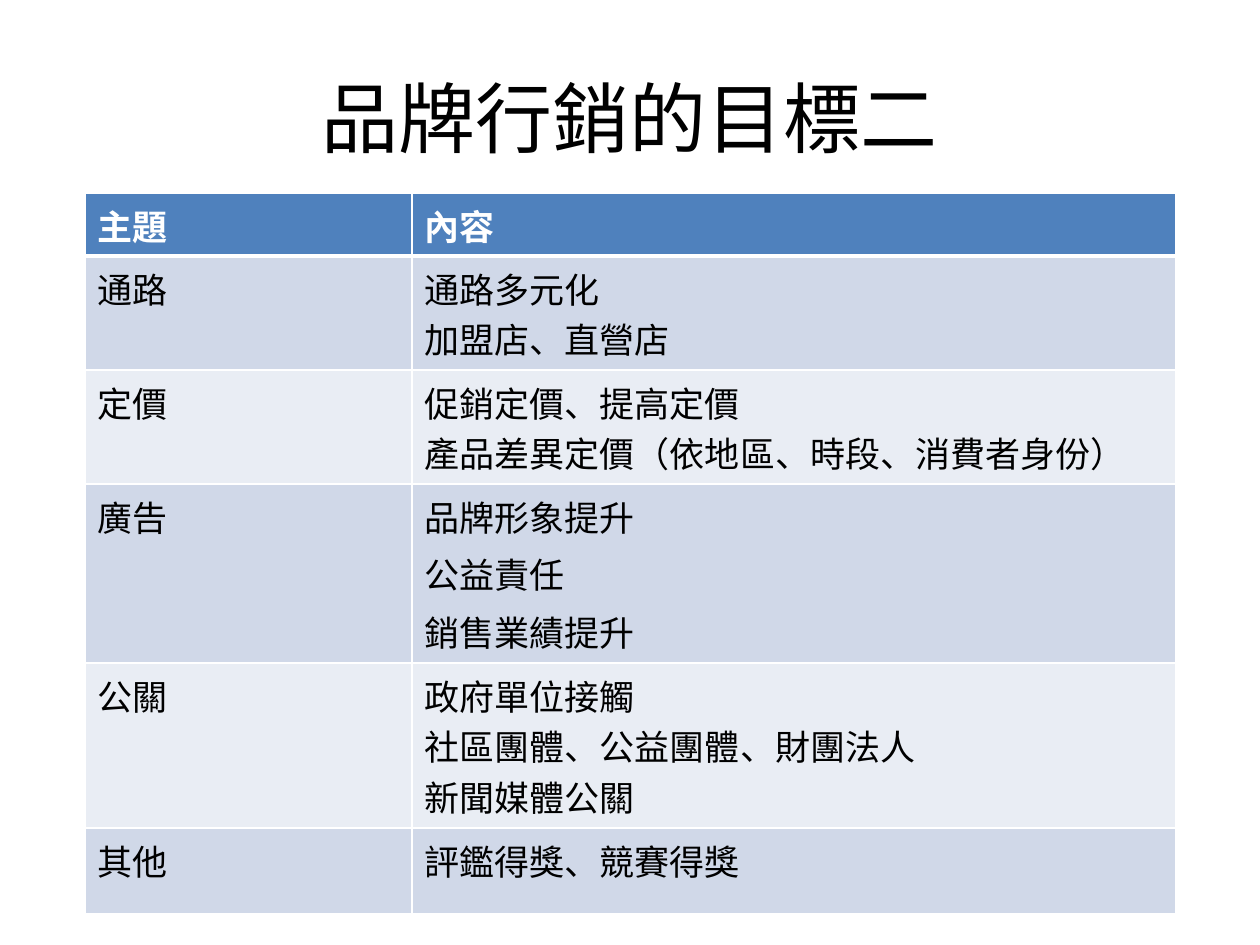
from pptx import Presentation
from pptx.dml.color import RGBColor
from pptx.enum.text import MSO_ANCHOR, PP_ALIGN
from pptx.oxml.ns import qn
from pptx.util import Pt
from lxml.etree import SubElement

EMU_PER_PX = 914400 / 126

BLACK = RGBColor(0x00, 0x00, 0x00)
WHITE = RGBColor(0xFF, 0xFF, 0xFF)
HEADER_BLUE = RGBColor(0x4F, 0x81, 0xBD)
BANDS = (RGBColor(0xD0, 0xD8, 0xE8), RGBColor(0xE9, 0xED, 0xF4))

CJK = "Noto Sans CJK SC"
LATIN = "Karla"

TITLE = {"name": CJK, "size": Pt(44), "bold": False}
HEADER = {"name": CJK, "size": Pt(20), "bold": True}
TOPIC = {"name": CJK, "size": Pt(20), "bold": False}
DETAIL = {"name": LATIN, "size": Pt(20), "bold": False}

COLUMN_WIDTHS = (327, 764)
HEADINGS = ("主題", "內容")
HEADER_HEIGHT = 63

# Topic, content lines, row height, content format, space before each line
GOALS = (
    ("通路", ("通路多元化", "加盟店、直營店"), 114, DETAIL, 0),
    ("定價", ("促銷定價、提高定價", "產品差異定價（依地區、時段、消費者身份）"), 114, DETAIL, 0),
    ("廣告", ("品牌形象提升", "公益責任", "銷售業績提升"), 179, DETAIL, 4),
    ("公關", ("政府單位接觸", "社區團體、公益團體、財團法人", "新聞媒體公關"), 165, TOPIC, 0),
    ("其他", ("評鑑得獎、競賽得獎",), 86, TOPIC, 0),
)


def px(length):
    return round(length * EMU_PER_PX)


def write_lines(frame, lines, look, color, space_before=0, align=PP_ALIGN.LEFT):
    for index, line in enumerate(lines):
        paragraph = frame.add_paragraph() if index else frame.paragraphs[0]
        paragraph.alignment = align
        paragraph.space_before = Pt(space_before)
        run = paragraph.add_run()
        run.text = line
        for attribute, value in look.items():
            setattr(run.font, attribute, value)
        run.font.color.rgb = color
        # East Asian glyphs need their own typeface entry
        east_asian = SubElement(run.font._element, qn("a:ea"), typeface=CJK)
        run.font._element.find(qn("a:latin")).addnext(east_asian)


def add_title(slide, text):
    title = slide.shapes.add_textbox(px(63), px(38), px(1134), px(158))
    frame = title.text_frame
    frame.word_wrap = True
    frame.vertical_anchor = MSO_ANCHOR.MIDDLE
    write_lines(frame, (text,), look=TITLE, color=BLACK, align=PP_ALIGN.CENTER)


def set_borders(cell, widths):
    properties = cell._tc.get_or_add_tcPr()
    for index, (side, points) in enumerate(widths.items()):
        line = properties.makeelement(qn(f"a:ln{side}"), {"w": str(Pt(points))})
        fill = SubElement(line, qn("a:solidFill"))
        SubElement(fill, qn("a:srgbClr"), val=str(WHITE))
        # Borders come before the fill in a cell's properties
        properties.insert(index, line)


def fill_cell(cell, lines, look, color, background, space_before=0, top=1, bottom=1):
    cell.fill.solid()
    cell.fill.fore_color.rgb = background
    set_borders(cell, {"L": 1, "R": 1, "T": top, "B": bottom})
    write_lines(cell.text_frame, lines, look, color, space_before)


def add_goals_table(slide):
    heights = [HEADER_HEIGHT] + [goal[2] for goal in GOALS]
    table = slide.shapes.add_table(
        len(heights), len(COLUMN_WIDTHS),
        px(85), px(193), px(sum(COLUMN_WIDTHS)), px(sum(heights)),
    ).table
    for column, width in zip(table.columns, COLUMN_WIDTHS):
        column.width = px(width)
    for row, height in zip(table.rows, heights):
        row.height = px(height)

    # Header row
    for column, heading in enumerate(HEADINGS):
        fill_cell(table.cell(0, column), (heading,), HEADER, WHITE, HEADER_BLUE, bottom=3)

    # Banded body rows
    for row, (topic, details, _, look, gap) in enumerate(GOALS, start=1):
        band = BANDS[(row - 1) % 2]
        top = 3 if row == 1 else 1
        fill_cell(table.cell(row, 0), (topic,), TOPIC, BLACK, band, top=top)
        fill_cell(table.cell(row, 1), details, look, BLACK, band, gap, top=top)


def main():
    presentation = Presentation()
    presentation.slide_width = px(1260)
    presentation.slide_height = px(945)
    slide = presentation.slides.add_slide(presentation.slide_layouts[6])
    add_title(slide, "品牌行銷的目標二")
    add_goals_table(slide)
    presentation.save("out.pptx")


if __name__ == "__main__":
    main()
